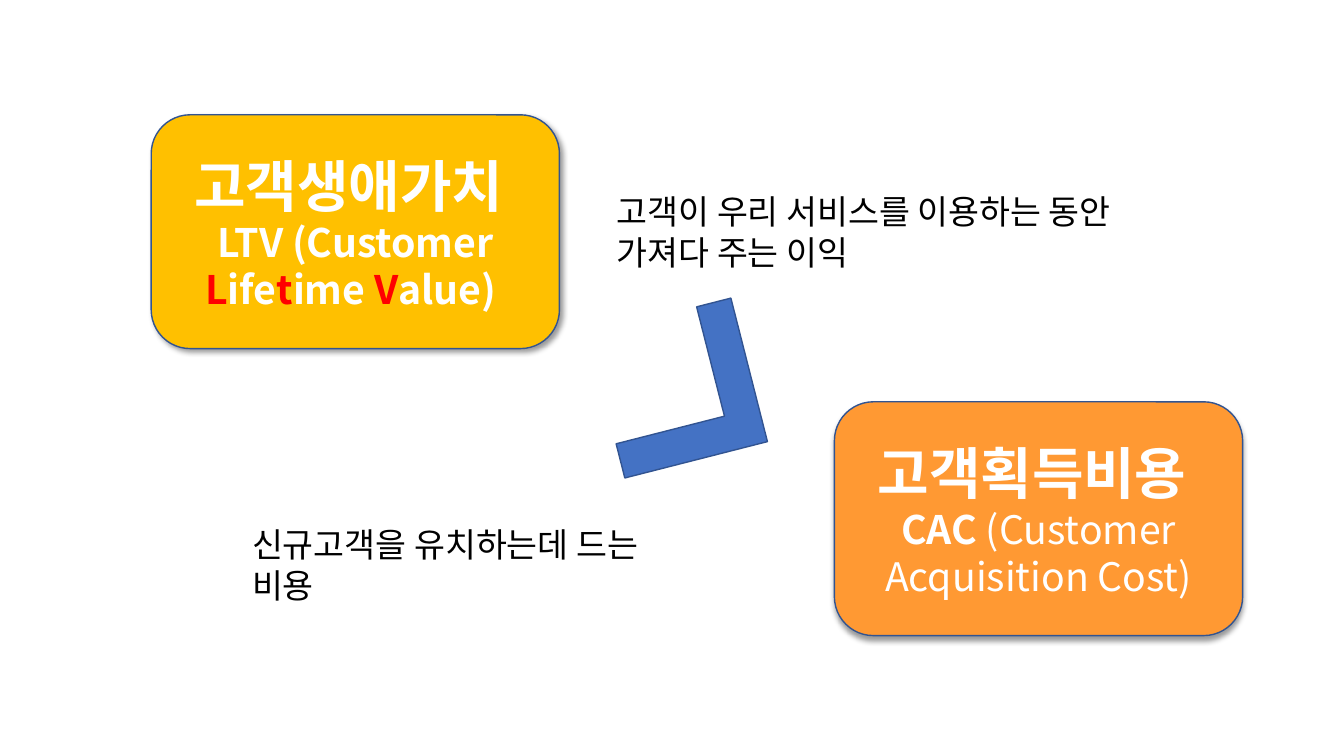
from lxml.etree import SubElement
from pptx import Presentation
from pptx.dml.color import RGBColor
from pptx.enum.shapes import MSO_SHAPE
from pptx.enum.text import MSO_ANCHOR, MSO_AUTO_SIZE, PP_ALIGN
from pptx.oxml import parse_xml
from pptx.oxml.ns import nsdecls, qn
from pptx.util import Pt

FONT = "Noto Sans CJK KR"
WHITE = RGBColor(0xFF, 0xFF, 0xFF)
BLACK = RGBColor(0, 0, 0)
RED = RGBColor(0xFF, 0, 0)
GOLD = RGBColor(0xFF, 0xC0, 0)
ORANGE = RGBColor(0xFF, 0x99, 0x33)
BLUE = RGBColor(0x44, 0x72, 0xC4)
OUTLINE = RGBColor(0x32, 0x54, 0x91)

# Content: cards hold a heading and (text, colour, bold) pieces
CARDS = [
    dict(left=108, top=82, fill=GOLD, shadow_angle=45, heading="고객생애가치 ",
         pieces=[("LTV (Customer ", WHITE, True), ("L", RED, True),
                 ("ife", WHITE, True), ("t", RED, True), ("ime ", WHITE, True),
                 ("V", RED, True), ("alue) ", WHITE, True)]),
    dict(left=596, top=287, fill=ORANGE, shadow_angle=90, heading="고객획득비용 ",
         pieces=[("CAC ", WHITE, True),
                 ("(Customer Acquisition Cost)", WHITE, False)]),
]
CAPTIONS = [
    (433.5, 133, 376, 65, ["고객이 우리 서비스를 이용하는 동안", "가져다 주는 이익"]),
    (173, 371, 338, 36, ["신규고객을 유치하는데 드는 비용"]),
]
CARD_WIDTH, CARD_HEIGHT = 291.6, 167


def add_run(paragraph, text, size, colour, bold=False):
    run = paragraph.add_run()
    run.text = text
    font = run.font
    font.name, font.size, font.bold = FONT, Pt(size), bold
    font.color.rgb = colour
    # Korean letters take the East Asian typeface
    SubElement(run._r.get_or_add_rPr(), qn("a:ea")).set("typeface", FONT)


def add_block(slide, preset, left, top, width, height, fill):
    block = slide.shapes.add_shape(preset, Pt(left), Pt(top), Pt(width), Pt(height))
    block.shadow.inherit = False
    block.fill.solid()
    block.fill.fore_color.rgb = fill
    block.line.color.rgb = OUTLINE
    block.line.width = Pt(1)
    return block


def add_shadow(block, angle):
    effects = block._element.spPr.find(qn("a:effectLst"))
    effects.append(parse_xml(
        f'<a:outerShdw {nsdecls("a")} blurRad="{Pt(4)}" dist="{Pt(3)}" '
        f'dir="{angle * 60000}" algn="ctr" rotWithShape="0">'
        '<a:srgbClr val="000000"><a:alpha val="40000"/></a:srgbClr></a:outerShdw>'))


def add_card(slide, left, top, fill, shadow_angle, heading, pieces):
    card = add_block(slide, MSO_SHAPE.ROUNDED_RECTANGLE, left, top,
                     CARD_WIDTH, CARD_HEIGHT, fill)
    add_shadow(card, shadow_angle)
    card.text_frame.vertical_anchor = MSO_ANCHOR.MIDDLE
    paragraph = card.text_frame.paragraphs[0]
    paragraph.alignment = PP_ALIGN.CENTER
    add_run(paragraph, heading, 40, WHITE, True)
    paragraph.add_line_break()
    for text, colour, bold in pieces:
        add_run(paragraph, text, 28, colour, bold)


def add_caption(slide, left, top, width, height, lines):
    caption = slide.shapes.add_textbox(Pt(left), Pt(top), Pt(width), Pt(height))
    frame = caption.text_frame
    frame.word_wrap = True
    frame.auto_size = MSO_AUTO_SIZE.SHAPE_TO_FIT_TEXT
    for i, line in enumerate(lines):
        paragraph = frame.add_paragraph() if i else frame.paragraphs[0]
        add_run(paragraph, line, 24, BLACK)


def main():
    deck = Presentation()
    deck.slide_width, deck.slide_height = Pt(960), Pt(540)
    slide = deck.slides.add_slide(deck.slide_layouts[6])

    # Two sides of the comparison
    for card in CARDS:
        add_card(slide, **card)
    for caption in CAPTIONS:
        add_caption(slide, *caption)

    # "Greater than" sign between them
    greater_than = add_block(slide, MSO_SHAPE.CORNER, 431.3, 224.6, 105.8, 105.1, BLUE)
    greater_than.rotation = 255.7
    greater_than.adjustments[0] = 0.24
    greater_than.adjustments[1] = 0.24

    deck.save("out.pptx")


if __name__ == "__main__":
    main()
